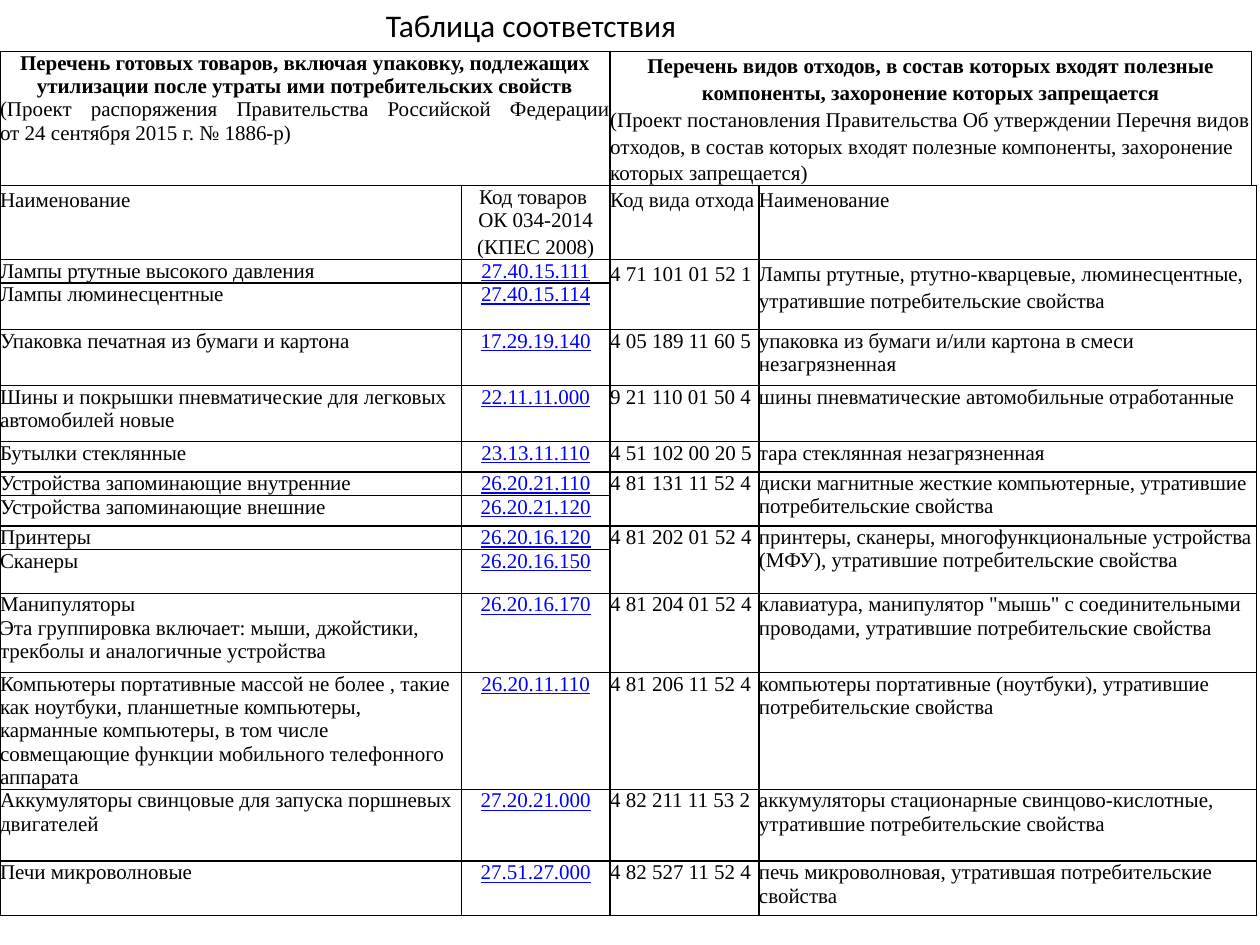
from lxml.etree import SubElement
from pptx import Presentation
from pptx.dml.color import RGBColor
from pptx.enum.text import MSO_AUTO_SIZE, PP_ALIGN as Align
from pptx.oxml.ns import qn
from pptx.util import Cm, Pt

BLACK = RGBColor(0x00, 0x00, 0x00)
CODE_BLUE = RGBColor(0x00, 0x00, 0xFF)
LOOSE = 1.15

COLUMN_WIDTHS = [9.3, 3, 3, 9.93, 0.08]
ROW_HEIGHTS = [2.7, 1.49, 0.47, 0.94, 1.13, 1.13, 0.61, 0.48,
               0.61, 0.48, 0.88, 1.6, 2.35, 1.45, 1.09]

# Each group: goods with their codes, then the waste code, waste name, line spacing
GROUPS = [
    ([("Лампы ртутные высокого давления", "27.40.15.111"),
      ("Лампы люминесцентные", "27.40.15.114")],
     "4 71 101 01 52 1",
     "Лампы ртутные, ртутно-кварцевые, люминесцентные, утратившие потребительские свойства", LOOSE),
    ([("Упаковка печатная из бумаги и картона", "17.29.19.140")],
     "4 05 189 11 60 5", "упаковка из бумаги и/или картона в смеси незагрязненная", None),
    ([("Шины и покрышки пневматические для легковых автомобилей новые", "22.11.11.000")],
     "9 21 110 01 50 4", "шины пневматические автомобильные отработанные", None),
    ([("Бутылки стеклянные", "23.13.11.110")],
     "4 51 102 00 20 5", "тара стеклянная незагрязненная", None),
    ([("Устройства запоминающие внутренние", "26.20.21.110"),
      ("Устройства запоминающие внешние", "26.20.21.120")],
     "4 81 131 11 52 4",
     "диски магнитные жесткие компьютерные, утратившие потребительские свойства", None),
    ([("Принтеры", "26.20.16.120"), ("Сканеры", "26.20.16.150")],
     "4 81 202 01 52 4",
     "принтеры, сканеры, многофункциональные устройства (МФУ), утратившие потребительские свойства",
     None),
    ([("Манипуляторы\nЭта группировка включает: мыши, джойстики, трекболы и аналогичные устройства",
       "26.20.16.170")],
     "4 81 204 01 52 4",
     'клавиатура, манипулятор "мышь" с соединительными проводами, утратившие потребительские свойства',
     None),
    ([("Компьютеры портативные массой не более , такие как ноутбуки, планшетные компьютеры, "
       "карманные компьютеры, в том числе совмещающие функции мобильного телефонного аппарата",
       "26.20.11.110")],
     "4 81 206 11 52 4", "компьютеры портативные (ноутбуки), утратившие потребительские свойства",
     None),
    ([("Аккумуляторы свинцовые для запуска поршневых двигателей", "27.20.21.000")],
     "4 82 211 11 53 2",
     "аккумуляторы стационарные свинцово-кислотные, утратившие потребительские свойства", None),
    ([("Печи микроволновые", "27.51.27.000")],
     "4 82 527 11 52 4", "печь микроволновая, утратившая потребительские свойства", None),
]


def style_paragraph(paragraph, font_name, size, align=Align.LEFT, spacing=None,
                    bold=False, color=BLACK, underline=False):
    paragraph.alignment = align
    if spacing:
        paragraph.line_spacing = spacing
    for run in paragraph.runs:
        font = run.font
        font.name, font.size = font_name, Pt(size)
        font.bold, font.underline = bold, underline
        font.color.rgb = color


def write_cell(cell, text, **style):
    cell.text_frame.text = text
    for paragraph in cell.text_frame.paragraphs:
        style_paragraph(paragraph, "Times New Roman", 12, **style)


def add_cell_paragraph(cell, text, **style):
    paragraph = cell.text_frame.add_paragraph()
    paragraph.text = text
    style_paragraph(paragraph, "Times New Roman", 12, **style)


def set_borders(cell, visible="LRTB"):
    properties = cell._tc.get_or_add_tcPr()
    for position, side in enumerate("LRTB"):
        line = SubElement(properties, qn(f"a:ln{side}"), w=str(Pt(1)))
        properties.insert(position, line)
        if side in visible:
            fill = SubElement(line, qn("a:solidFill"))
            SubElement(fill, qn("a:srgbClr"), val=str(BLACK))
        else:
            SubElement(line, qn("a:noFill"))


def add_grid(slide):
    frame = slide.shapes.add_table(len(ROW_HEIGHTS), len(COLUMN_WIDTHS), 0, Cm(1.04),
                                   Cm(sum(COLUMN_WIDTHS)), Cm(sum(ROW_HEIGHTS)))
    table = frame.table
    table.first_row = table.horz_banding = False
    for column, width in zip(table.columns, COLUMN_WIDTHS):
        column.width = Cm(width)
    for row, height in zip(table.rows, ROW_HEIGHTS):
        row.height = Cm(height)
    edge_cell = table.cell(0, 4)
    for cell in table.iter_cells():
        cell.margin_left = cell.margin_right = cell.margin_top = cell.margin_bottom = 0
        cell.fill.background()
        set_borders(cell, "LB" if cell == edge_cell else "LRTB")
    return table


def fill_headings(table):
    goods, waste = table.cell(0, 0), table.cell(0, 2)
    goods.merge(table.cell(0, 1))
    waste.merge(table.cell(0, 3))
    write_cell(goods, "Перечень готовых товаров, включая упаковку, подлежащих утилизации "
               "после утраты ими потребительских свойств", align=Align.CENTER, bold=True)
    add_cell_paragraph(goods, "(Проект распоряжения Правительства Российской Федерации\n"
                       "от 24 сентября 2015 г. № 1886-р)", align=Align.JUSTIFY)
    write_cell(waste, "Перечень видов отходов, в состав которых входят полезные компоненты, "
               "захоронение которых запрещается", align=Align.CENTER, spacing=LOOSE, bold=True)
    add_cell_paragraph(waste, "(Проект постановления Правительства Об утверждении Перечня видов "
                       "отходов, в состав которых входят полезные компоненты, захоронение которых "
                       "запрещается)", spacing=LOOSE)

    # Column captions
    table.cell(1, 3).merge(table.cell(1, 4))
    for column, caption in ((0, "Наименование"), (2, "Код вида отхода"), (3, "Наименование")):
        write_cell(table.cell(1, column), caption, spacing=LOOSE)
    goods_code = table.cell(1, 1)
    write_cell(goods_code, "Код товаров \vОК 034-2014", align=Align.CENTER)
    add_cell_paragraph(goods_code, "(КПЕС 2008)", align=Align.CENTER, spacing=LOOSE)


def fill_groups(table):
    top = 2
    for goods, waste_code, waste_name, spacing in GROUPS:
        bottom = top + len(goods) - 1
        if bottom > top:
            table.cell(top, 2).merge(table.cell(bottom, 2))
        table.cell(top, 3).merge(table.cell(bottom, 4))
        write_cell(table.cell(top, 2), waste_code, spacing=spacing)
        write_cell(table.cell(top, 3), waste_name, spacing=spacing)
        for row, (name, code) in enumerate(goods, top):
            write_cell(table.cell(row, 0), name)
            write_cell(table.cell(row, 1), code, align=Align.CENTER,
                       color=CODE_BLUE, underline=True)
        top = bottom + 1


def add_title(slide):
    title = slide.shapes.add_textbox(Cm(7.49), 0, Cm(6.43), Cm(1.03)).text_frame
    title.word_wrap = False
    title.auto_size = MSO_AUTO_SIZE.SHAPE_TO_FIT_TEXT
    title.text = "Таблица соответствия"
    style_paragraph(title.paragraphs[0], "Calibri", 18, align=Align.CENTER)


def main():
    presentation = Presentation()
    presentation.slide_width, presentation.slide_height = Cm(25.4), Cm(19.05)
    slide = presentation.slides.add_slide(presentation.slide_layouts[6])

    # Correspondence table
    table = add_grid(slide)
    fill_headings(table)
    fill_groups(table)

    add_title(slide)
    presentation.save("out.pptx")


if __name__ == "__main__":
    main()
